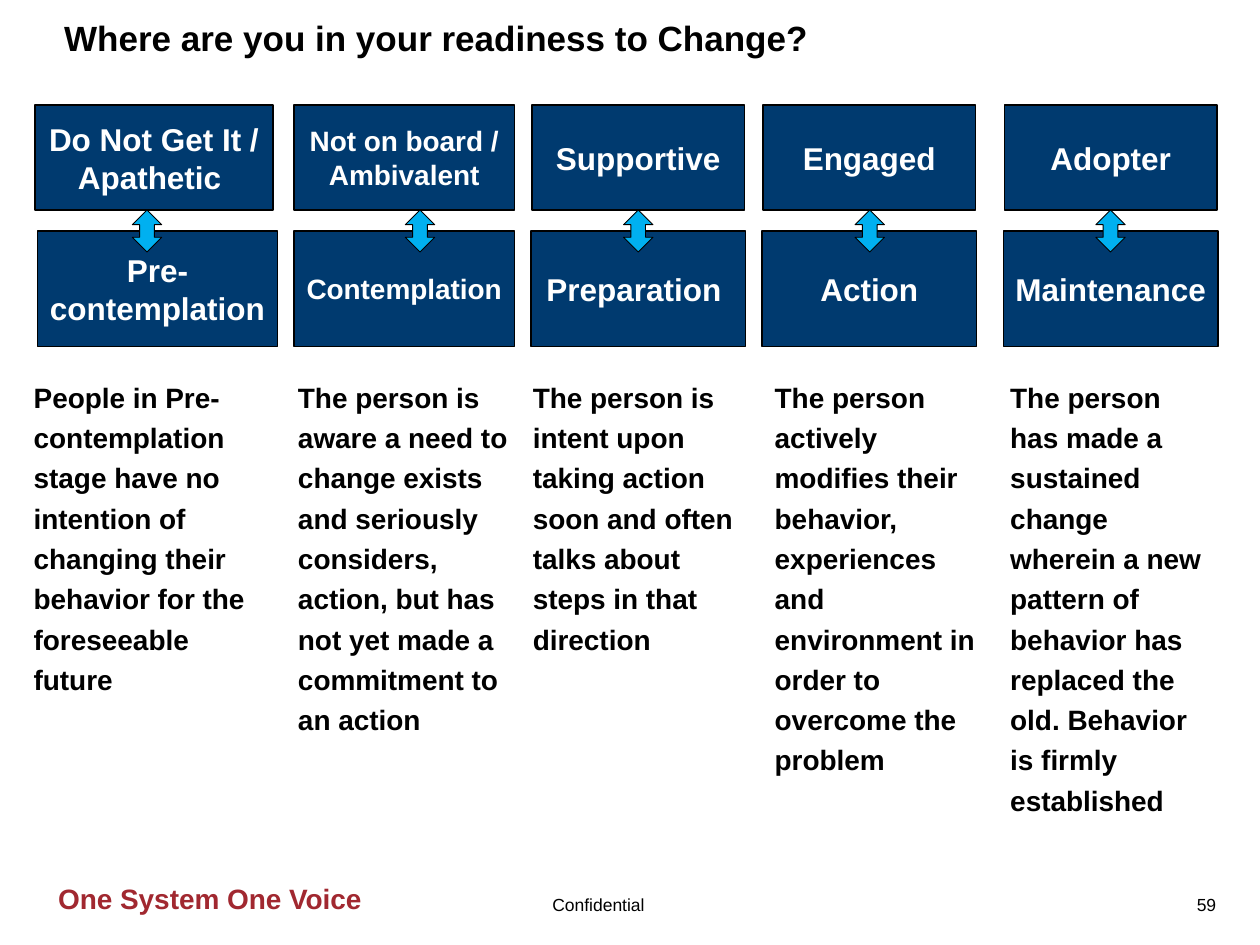
from pptx import Presentation as Deck
from pptx.util import Pt
from pptx.dml.color import RGBColor as Color
from pptx.enum.shapes import MSO_SHAPE as Kind
from pptx.enum.text import MSO_ANCHOR as Anchor, PP_ALIGN as Align

NAVY = Color(0x00, 0x3A, 0x6F)
CYAN = Color(0x00, 0xB0, 0xF0)
RED = Color(0xA1, 0x28, 0x30)
BLACK = Color(0, 0, 0)
WHITE = Color(255, 255, 255)

STAGES = [
    {"top": ("Do Not Get It /\nApathetic ", 20, 136), "low": ("Pre-contemplation", 21.5, 137),
     "note": ("People in Pre-contemplation stage have no intention of changing "
              "their behavior for the foreseeable future", 12.2, 146.2),
     "size": 18, "mid": 84},
    {"top": ("Not on board /\nAmbivalent", 168, 126), "low": ("Contemplation", 168, 126),
     "note": ("The person is aware a need to change exists and seriously considers, "
              "action, but has not yet made a commitment to an action", 163.2, 140.4),
     "size": 16, "mid": 240},
    {"top": ("Supportive", 304, 121.5), "low": ("Preparation ", 303.5, 122.5),
     "note": ("The person is intent upon taking action soon and often talks about "
              "steps in that direction", 297.4, 134.6),
     "size": 18, "mid": 364.7},
    {"top": ("Engaged", 436, 121.5), "low": ("Action", 435.5, 122.5),
     "note": ("The person actively modifies their behavior, experiences and "
              "environment in order to overcome the problem", 435.6, 135.4),
     "size": 18, "mid": 497},
    {"top": ("Adopter", 574, 121.5), "low": ("Maintenance", 573.5, 122.5),
     "note": ("The person has made a sustained change wherein a new pattern of "
              "behavior has replaced the old. Behavior is firmly established", 570.2, 128.2),
     "size": 18, "mid": 634.6},
]


def style(frame, size, color, bold, align):
    """Set font and alignment on every paragraph."""
    for para in frame.paragraphs:
        para.alignment = align
        font = para.font
        font.name, font.size, font.bold = "Arial", Pt(size), bold
        font.color.rgb = color


def add_text(slide, text, area, size, color=BLACK, bold=True, align=Align.LEFT):
    """Add a wrapped text box and return its frame."""
    frame = slide.shapes.add_textbox(*map(Pt, area)).text_frame
    frame.word_wrap = True
    frame.text = text
    style(frame, size, color, bold, align)
    return frame


def add_form(slide, kind, area, fill, width):
    """Add a filled shape with a black outline."""
    form = slide.shapes.add_shape(kind, *map(Pt, area))
    form.shadow.inherit = False
    form.fill.solid()
    form.fill.fore_color.rgb = fill
    form.line.color.rgb = BLACK
    form.line.width = Pt(width)
    return form


def add_box(slide, label, top, height, size):
    """Add a navy box with a centred label."""
    text, left, width = label
    form = add_form(slide, Kind.RECTANGLE, (left, top, width, height), NAVY, 0.75)
    frame = form.text_frame
    frame.margin_left = frame.margin_right = Pt(3.6)
    frame.margin_top = frame.margin_bottom = Pt(3.6)
    frame.vertical_anchor = Anchor.MIDDLE
    frame.word_wrap = True
    frame.text = text
    style(frame, size, WHITE, True, Align.CENTER)


def add_note(slide, note):
    """Add the description below a stage."""
    text, left, width = note
    para = add_text(slide, text, (left, 210, width, 270), 16).paragraphs[0]
    para.line_spacing = 1.2
    para.space_before = Pt(3.2)


def add_stage(slide, stage):
    """Add one column with two boxes, an arrow and a note."""
    add_box(slide, stage["top"], 60, 60, stage["size"])
    add_box(slide, stage["low"], 132, 66, stage["size"])
    area = (stage["mid"] - 8.4, 120, 16.8, 24)
    add_form(slide, Kind.UP_DOWN_ARROW, area, CYAN, 0.5)
    add_note(slide, stage["note"])


def main():
    """Build and save the slide."""
    deck = Deck()
    deck.slide_width, deck.slide_height = Pt(720), Pt(540)
    slide = deck.slides.add_slide(deck.slide_layouts[6])
    add_text(slide, " Where are you in your readiness to Change?", (24, 6, 672, 55), 20)
    for stage in STAGES:
        add_stage(slide, stage)
    add_text(slide, "One System One Voice", (18, 500.4, 204, 26.6), 16, RED, align=Align.CENTER)
    add_text(slide, "Confidential", (288, 507.6, 108, 19.4), 10, bold=False, align=Align.CENTER)
    add_text(slide, "59", (669.6, 507.6, 32.4, 19.4), 10, bold=False, align=Align.RIGHT)
    deck.save("out.pptx")


if __name__ == "__main__":
    main()
